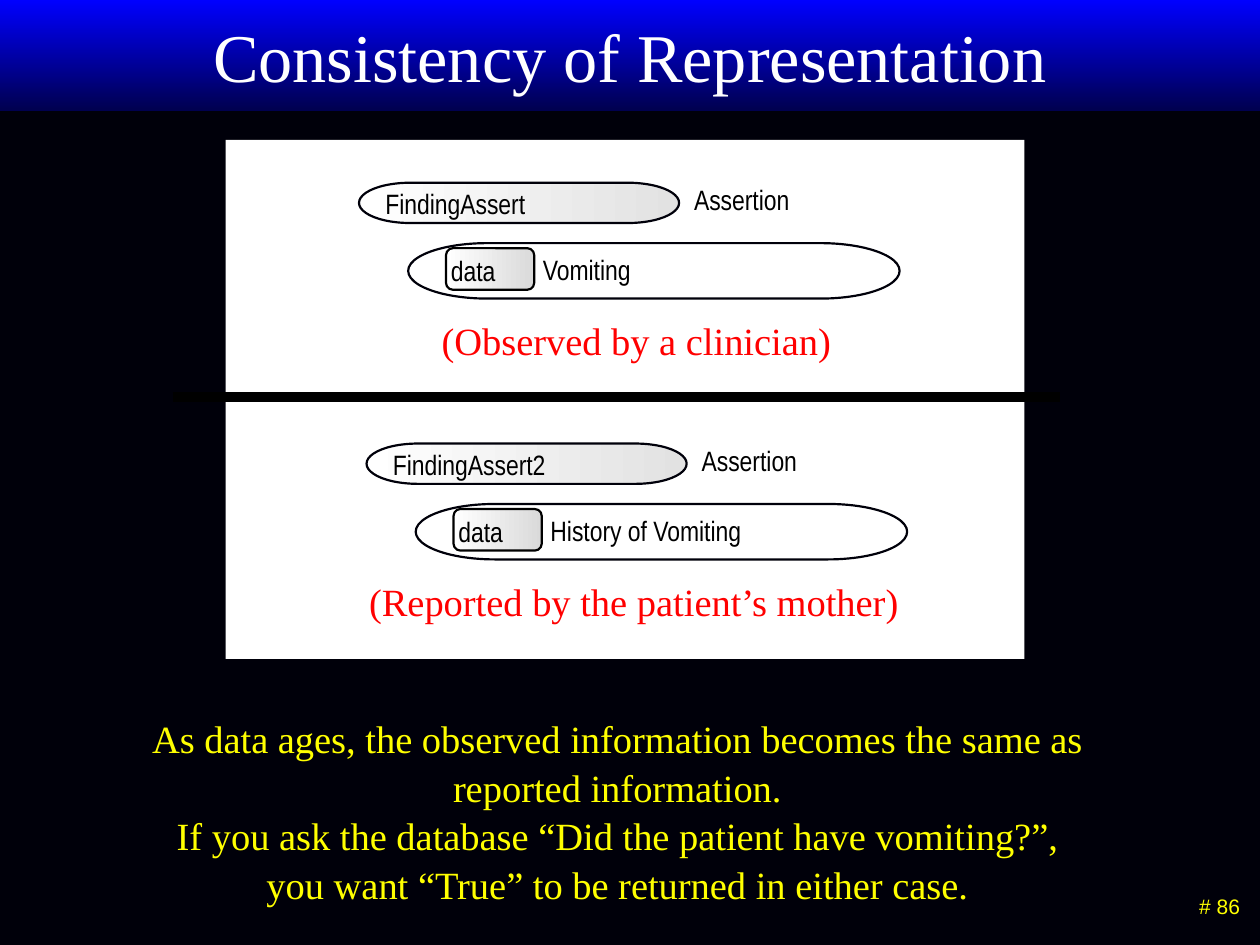
import pptx
import pptx.util
from lxml import etree
from pptx.dml.color import RGBColor
from pptx.enum.shapes import MSO_CONNECTOR, MSO_SHAPE
from pptx.enum.text import MSO_ANCHOR, PP_ALIGN
from pptx.oxml.ns import qn

THEME = {
    "background": "00000A",
    "band": ("0000FF", "00004F"),
    "pill": ("FFFFFF", "E2E2E2"),
    "tag": ("FFFFFF", "DADADA"),
    "white": "FFFFFF",
    "outline": "00000A",
    "rule": "000000",
    "outline_width": 1.25,
    "rule_width": 6,
    "line_spacing": 1.05,
}
# Each style: font, size, colour, alignment
STYLES = {
    "title": ("Times New Roman", 39, "FFFFFF", PP_ALIGN.CENTER),
    "label": ("Arial Narrow", 16, "000000", PP_ALIGN.LEFT),
    "caption": ("Times New Roman", 22, "FF0000", PP_ALIGN.CENTER),
    "conclusion": ("Times New Roman", 22, "FFFF00", PP_ALIGN.CENTER),
    "number": ("Arial", 12, "FFFF00", PP_ALIGN.RIGHT),
}

TITLE = "Consistency of Representation"
# Each assertion: left and top of its diagram, name, finding, caption, caption centre
ASSERTIONS = [
    (2.85, 1.45, "FindingAssert", "Vomiting", "(Observed by a clinician)", 5.05),
    (2.91, 3.52, "FindingAssert2", "History of Vomiting",
     "(Reported by the patient’s mother)", 5.03),
]
CONCLUSION = [
    "As data ages, the observed information becomes the same as reported information.",
    "If you ask the database “Did the patient have vomiting?”, "
    "you want “True” to be returned in either case.",
]
PAGE_NUMBER = "# 86"

deck = pptx.Presentation()
deck.slide_width, deck.slide_height = pptx.util.Inches(10), pptx.util.Inches(7.5)
page = deck.slides.add_slide(deck.slide_layouts[5])
page.background.fill.solid()
page.background.fill.fore_color.rgb = RGBColor.from_string(THEME["background"])


def inches(*lengths):
    return [pptx.util.Inches(length) for length in lengths]


def write(frame, lines, style):
    font, size, colour, align = STYLES[style]
    frame.word_wrap = True
    frame.vertical_anchor = MSO_ANCHOR.TOP
    frame.text = "\n".join(lines)
    for para in frame.paragraphs:
        para.alignment = align
        para.line_spacing = THEME["line_spacing"]
        for span in para.runs:
            for name, value in {"name": font, "size": pptx.util.Pt(size)}.items():
                setattr(span.font, name, value)
            span.font.color.rgb = RGBColor.from_string(colour)


def add_text(lines, style, *place):
    box = page.shapes.add_textbox(*inches(*place))
    write(box.text_frame, lines, style)


def add_figure(kind, fill, place, outline=None, angle=0):
    """Draw a preset shape; a pair of colours as fill makes a gradient."""
    figure = page.shapes.add_shape(kind, *inches(*place))
    figure.shadow.inherit = False
    if isinstance(fill, tuple):
        figure.fill.gradient()
        figure.fill.gradient_angle = angle
        for stop, colour in zip(figure.fill.gradient_stops, fill):
            stop.color.rgb = RGBColor.from_string(colour)
    else:
        figure.fill.solid()
        figure.fill.fore_color.rgb = RGBColor.from_string(fill)
    if outline:
        figure.line.color.rgb = RGBColor.from_string(outline)
        figure.line.width = pptx.util.Pt(THEME["outline_width"])
    else:
        figure.line.fill.background()


def add_assertion(left, top, name, finding, caption, centre):
    pill, outline = MSO_SHAPE.FLOWCHART_TERMINATOR, THEME["outline"]
    add_figure(pill, THEME["pill"], (left, top, 2.54, 0.32), outline)
    add_figure(pill, THEME["white"], (left + 0.39, top + 0.48, 3.9, 0.44), outline)
    add_figure(MSO_SHAPE.ROUNDED_RECTANGLE, THEME["tag"],
               (left + 0.69, top + 0.52, 0.7, 0.33), THEME["rule"])
    labels = [(name, 0.11, -0.03, 2), ("Assertion", 2.56, -0.06, 1.59),
              ("data", 0.63, 0.5, 0.7), (finding, 1.36, 0.49, 2.79)]
    for text, across, down, width in labels:
        add_text([text], "label", left + across, top + down, width, 0.37)
    width = 4.8
    add_text([caption], "caption", centre - width / 2, top + 1, width, 0.47)


add_figure(MSO_SHAPE.RECTANGLE, THEME["band"], (0, 0, 10, 0.88), angle=270)
add_figure(MSO_SHAPE.RECTANGLE, THEME["white"], (1.79, 1.11, 6.34, 4.12))

title = page.shapes.title
for side, length in zip(("left", "top", "width", "height"), inches(0.75, 0, 8.5, 1.25)):
    setattr(title, side, length)
write(title.text_frame, [TITLE], "title")
title.text_frame.margin_top = pptx.util.Inches(0.08)
# Keep the title in front of the band
page.shapes._spTree.append(title._element)

for assertion in ASSERTIONS:
    add_assertion(*assertion)

divider = page.shapes.add_connector(MSO_CONNECTOR.STRAIGHT, *inches(1.37, 3.15, 8.41, 3.15))
divider.line.color.rgb = RGBColor.from_string(THEME["rule"])
divider.line.width = pptx.util.Pt(THEME["rule_width"])
etree.SubElement(divider._element.spPr, qn("a:effectLst"))

add_text(CONCLUSION, "conclusion", 1.1, 5.61, 7.6, 1.57)
add_text([PAGE_NUMBER], "number", 8.9, 7.03, 1.04, 0.34)

deck.save("out.pptx")
